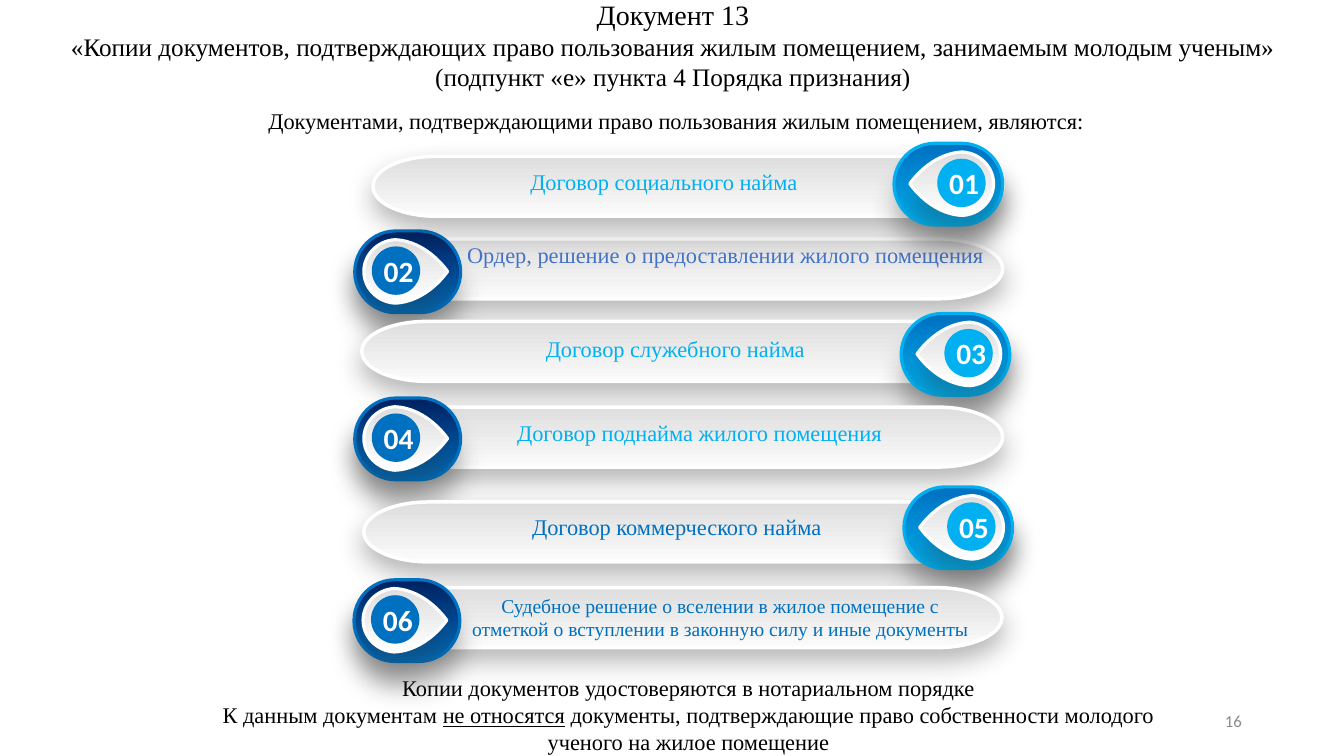
"""Build the slide on papers that prove the right to use a dwelling."""
import pptx
import pptx.util
import pptx.dml.color
import pptx.enum.shapes
import pptx.enum.text
import pptx.oxml
import pptx.oxml.ns

Cm = pptx.util.Cm
RGBColor = pptx.dml.color.RGBColor
Shape = pptx.enum.shapes.MSO_SHAPE
Align = pptx.enum.text.PP_ALIGN
Anchor = pptx.enum.text.MSO_ANCHOR
qn = pptx.oxml.ns.qn

BLACK = RGBColor(0x00, 0x00, 0x00)
WHITE = RGBColor(0xFF, 0xFF, 0xFF)
GREY = RGBColor(0x8C, 0x8C, 0x8C)
SILVER = RGBColor(0xDE, 0xDE, 0xDE)
PALE = RGBColor(0xFB, 0xFB, 0xFB)
NAVY = RGBColor(0x00, 0x20, 0x60)
BLUE = RGBColor(0x00, 0x70, 0xC0)
SKY = RGBColor(0x00, 0xB0, 0xF0)
STEEL = RGBColor(0x44, 0x72, 0xC4)

SERIF = "Times New Roman"
SANS = "Calibri"

BAR_HIGH = 1.51
EYE_WIDE, EYE_HIGH = 2.11, 1.6
DOT = 1.22

ROWS = [
    ("02", "Ордер, решение о предоставлении жилого помещения",
     (8.94, 6.02, 16.33), (8.94, 5.82), (10.95, 5.94, 14.66), 16, STEEL),
    ("03", "Договор служебного найма",
     (9.12, 8.1, 16.33), (22.71, 7.9), (10.16, 8.33, 13.72), 16, SKY),
    ("01", "Договор социального найма",
     (9.4, 3.94, 15.88), (22.53, 3.61), (9.63, 4.11, 14.2), 16, SKY),
    ("04", "Договор поднайма жилого помещения ",
     (8.94, 10.26, 16.33), (8.94, 10.03), (10.36, 10.44, 14.68), 16, SKY),
    ("05", "Договор коммерческого найма",
     (9.17, 12.65, 16.33), (22.78, 12.27), (10.36, 12.8, 13.39), 16, BLUE),
    ("06", "Судебное решение о вселении в жилое помещение с отметкой "
     "о вступлении в законную силу и иные документы",
     (8.92, 14.81, 16.33), (8.92, 14.61), (11.46, 14.83, 13.39), 14, BLUE),
]


def say(frame, text, size=16, color=BLACK, font=SERIF, bold=False,
        align=Align.CENTER, under="", after=0, line=1.0):
    """Add one formatted paragraph, with one phrase underlined if asked."""
    para = frame.paragraphs[0]
    if para.runs:
        para = frame.add_paragraph()
    para.alignment = align
    para.space_before = pptx.util.Pt(0)
    para.space_after = pptx.util.Pt(after)
    para.line_spacing = line
    parts = text.partition(under) if under else (text,)
    for part in parts:
        run = para.add_run()
        run.text = part
        run.font.size = pptx.util.Pt(size)
        run.font.name = font
        run.font.bold = bold
        run.font.color.rgb = color
        if part == under:
            run.font.underline = True


def box(slide, left, top, wide, high, wrap=True):
    """Add a text box and return its frame."""
    frame = slide.shapes.add_textbox(Cm(left), Cm(top), Cm(wide), Cm(high)).text_frame
    frame.word_wrap = wrap
    return frame


def trace(slide, start, arcs, left, top, wide, high, flip=False):
    """Draw a closed outline from lines and curves given in a unit square."""
    points = [start] + [point for arc in arcs for point in arc]
    spots = [(Cm(left + wide * (1 - x if flip else x)), Cm(top + high * y))
             for x, y in points]
    maker = slide.shapes.build_freeform(*spots[0], scale=1.0)
    maker.add_line_segments(spots[1:], close=True)
    shape = maker.convert_to_shape()
    lines = list(shape._element.iter(qn("a:lnTo")))
    for arc in arcs:
        nodes, lines = lines[:len(arc)], lines[len(arc):]
        if len(arc) == 3:
            bend = pptx.oxml.parse_xml(
                f'<a:cubicBezTo {pptx.oxml.ns.nsdecls("a")}/>')
            nodes[0].addprevious(bend)
            for node in nodes:
                bend.append(node[0])
                node.getparent().remove(node)
    return shape


def shade(shape, first, last, edge, width, drop, alpha):
    """Give a shape a downward gradient, an outline and a soft shadow."""
    shape.fill.gradient()
    shape.fill.gradient_angle = 270
    for stop, color in zip(shape.fill.gradient_stops, (first, last)):
        stop.color.rgb = color
    shape.line.color.rgb = edge
    shape.line.width = pptx.util.Pt(width)
    shape.shadow.inherit = False
    effect = shape._element.spPr.find(qn("a:effectLst"))
    effect.append(pptx.oxml.parse_xml(
        f'<a:outerShdw {pptx.oxml.ns.nsdecls("a")} blurRad="{pptx.util.Pt(18)}" '
        f'dist="{pptx.util.Pt(drop)}" dir="5400000" algn="t" rotWithShape="0">'
        f'<a:srgbClr val="262626"><a:alpha val="{alpha * 1000}"/></a:srgbClr>'
        '</a:outerShdw>'))


def bar(slide, left, top, wide):
    """Draw a long bar with rounded ends."""
    arcs = [
        ((0, 0.78), (0.045, 1), (0.1, 1)),
        ((0.9, 1),),
        ((0.955, 1), (1, 0.78), (1, 0.5)),
        ((1, 0.22), (0.955, 0), (0.9, 0)),
        ((0.1, 0),),
        ((0.045, 0), (0, 0.22), (0, 0.5)),
    ]
    shape = trace(slide, (0, 0.5), arcs, left, top, wide, BAR_HIGH)
    shade(shape, SILVER, PALE, WHITE, 2.5, 8, 33)


def badge(slide, number, left, top):
    """Draw a numbered badge that points towards the middle of its bar."""
    flip = int(number) % 2 == 1
    wide = 2.74 if flip else 2.67
    dark, light = (BLUE, SKY) if flip else (NAVY, BLUE)

    def place(inset, width):
        """Return the left edge of a part, mirrored on right-hand badges."""
        return left + (wide - inset - width if flip else inset)

    case = slide.shapes.add_shape(
        Shape.ROUNDED_RECTANGLE, Cm(left), Cm(top), Cm(wide), Cm(2.06))
    case.adjustments[0] = 0.5
    shade(case, dark, light, light, 2.25, 18, 28)

    arcs = [
        ((0.16, 0.02), (0, 0.24), (0, 0.5)),
        ((0, 0.76), (0.16, 0.98), (0.37, 1)),
        ((0.76, 0.98), (1, 0.5), (1, 0.5)),
        ((1, 0.5), (0.76, 0.02), (0.37, 0)),
    ]
    eye = trace(slide, (0.37, 0), arcs, place(0.23, EYE_WIDE), top + 0.22,
                EYE_WIDE, EYE_HIGH, flip)
    shade(eye, SILVER, WHITE, WHITE, 2.25, 18, 28)

    spot = place(0.43, DOT)
    dot = slide.shapes.add_shape(
        Shape.OVAL, Cm(spot), Cm(top + 0.39), Cm(DOT), Cm(DOT))
    dot.fill.solid()
    dot.fill.fore_color.rgb = light
    dot.line.fill.background()
    dot.shadow.inherit = False
    say(box(slide, spot + 0.04, top + 0.43, 1.27, 1.14, wrap=False), number,
        size=21, color=WHITE, font=SANS, bold=True)


def head(slide):
    """Fill and place the title."""
    title = slide.shapes.title
    title.left, title.top = Cm(0.03), Cm(-0.18)
    title.width, title.height = Cm(33.86), Cm(2.64)
    frame = title.text_frame
    frame.auto_size = pptx.enum.text.MSO_AUTO_SIZE.NONE
    frame.vertical_anchor = Anchor.TOP
    say(frame, "Документ 13", size=20)
    say(frame, "«Копии документов, подтверждающих право пользования жилым "
        "помещением, занимаемым молодым ученым»", size=18)
    say(frame, "(подпункт «е» пункта 4 Порядка признания)", size=18)


def main():
    """Build and save the slide."""
    deck = pptx.Presentation()
    deck.slide_width, deck.slide_height = Cm(33.87), Cm(19.05)
    slide = deck.slides.add_slide(deck.slide_layouts[5])
    head(slide)
    say(box(slide, 4.34, 2.54, 25.4, 0.99), "Документами, подтверждающими право "
        "пользования жилым помещением, являются:", after=6, line=1.07)
    close = box(slide, 4.65, 16.87, 25.4, 2.31)
    say(close, "Копии документов удостоверяются в нотариальном порядке")
    say(close, "К данным документам не относятся документы, подтверждающие право "
        "собственности молодого ученого на жилое помещение", under="не относятся")
    for number, text, strip, mark, (left, top, wide), size, color in ROWS:
        bar(slide, *strip)
        say(box(slide, left, top, wide, 0.94), text, size=size, color=color)
        badge(slide, number, *mark)
    page = box(slide, 23.93, 17.65, 7.62, 1.02)
    page.vertical_anchor = Anchor.MIDDLE
    say(page, "16", size=12, color=GREY, font=SANS, align=Align.RIGHT)
    deck.save("out.pptx")


if __name__ == "__main__":
    main()
